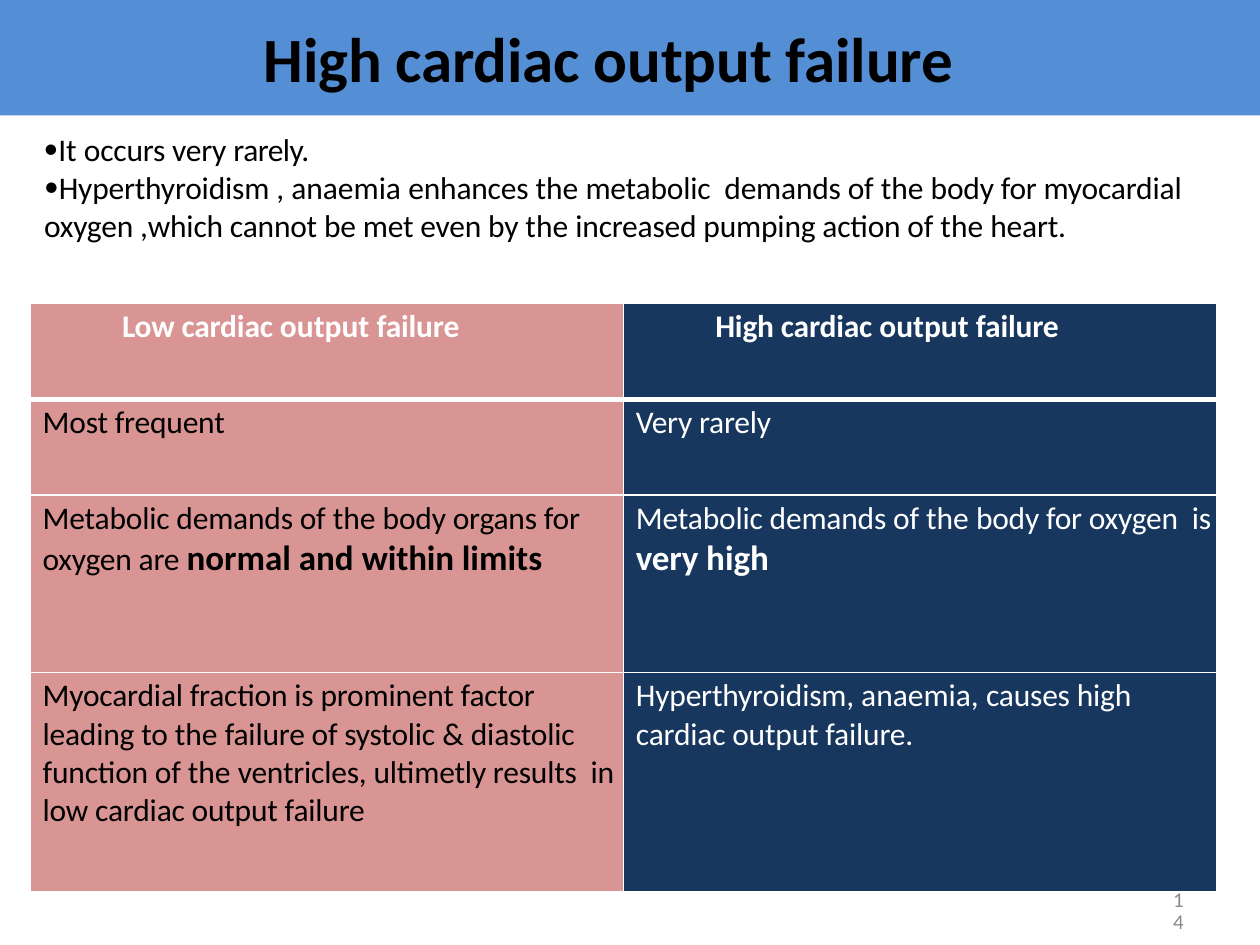
import pptx
import pptx.util
import pptx.dml.color
import pptx.enum.shapes
import pptx.enum.text
import pptx.oxml.ns
from lxml import etree
from dataclasses import dataclass

Cm = pptx.util.Cm
Pt = pptx.util.Pt
Rgb = pptx.dml.color.RGBColor.from_string
qn = pptx.oxml.ns.qn


@dataclass
class Theme:
    font: str = "Calibri"
    bar: str = "548ED4"
    rose: str = "D99593"
    navy: str = "17375E"
    black: str = "000000"
    white: str = "FFFFFF"
    gray: str = "888888"
    head: int = 36
    body: int = 18
    big: int = 20
    small: int = 12


theme = Theme()


def write(para, runs, size, color, bold=False, left=0, hang=0, before=0):
    para.space_before = Pt(before)
    props = para._p.get_or_add_pPr()
    props.set("marL", str(Cm(left)))
    props.set("indent", str(Cm(hang)))
    for text, gap, *strong in runs:
        run = para.add_run()
        run.text = text
        run.font.name = theme.font
        run.font.size = Pt(theme.big if strong else size)
        run.font.bold = bold or bool(strong)
        run.font.color.rgb = Rgb(color)
        run._r.get_or_add_rPr().set("spc", str(gap))
    return props


def setup(shape, x, y, w, h, top=0):
    shape.left, shape.top, shape.width, shape.height = Cm(x), Cm(y), Cm(w), Cm(h)
    frame = shape.text_frame
    frame.word_wrap = True
    frame.auto_size = pptx.enum.text.MSO_AUTO_SIZE.SHAPE_TO_FIT_TEXT
    frame.vertical_anchor = pptx.enum.text.MSO_ANCHOR.TOP
    frame.margin_left = frame.margin_right = frame.margin_bottom = 0
    frame.margin_top = Cm(top)
    return frame


deck = pptx.Presentation()
deck.slide_width, deck.slide_height = Cm(25.4), Cm(19.05)
slide = deck.slides.add_slide(deck.slide_layouts[5])
shapes = slide.shapes

title = shapes.title
frame = setup(title, 3.28, 0.36, 17.93, 1.6, 0.03)
para = frame.paragraphs[0]
para.alignment = pptx.enum.text.PP_ALIGN.CENTER
write(para, [("High cardiac output failure", -10)], theme.head, theme.black,
      True, 0.03, 0, 1)

bar = shapes.add_shape(pptx.enum.shapes.MSO_SHAPE.RECTANGLE, 0, 0, Cm(25.4), Cm(2.33))
bar.shadow.inherit = False
bar.fill.solid()
bar.fill.fore_color.rgb = Rgb(theme.bar)
bar.line.fill.background()
title.element.addprevious(bar.element)

page = shapes.add_textbox(0, 0, 0, 0)
para = setup(page, 23.55, 17.95, 0.43, 0.48).paragraphs[0]
para.line_spacing = Pt(12.4)
write(para, [("14", 0)], theme.small, theme.gray, left=0.1)

rows = [
    ([("Low cardiac ", -10), ("output ", 0), ("failure", -10)],
     [("High cardiac ", -10), ("output ", 0), ("failure", -10)]),
    ([("Most frequent", -10)],
     [("Very ", -20), ("rarely", -10)]),
    ([("Metabolic demands of ", -10), ("the ", 0), ("body organs for  oxygen are ", -10),
      ("normal and ", 0, True), ("within ", -10, True), ("limits", 0, True)],
     [("Metabolic demands of ", -10), ("the ", 0), ("body for oxygen  is ", -10),
      ("very ", -10, True), ("high", 0, True)]),
    ([("Myocardial fraction is prominent factor  leading to ", -10), ("the ", 0),
      ("failure of systolic ", -10), ("& ", 0), ("diastolic  function of ", -10),
      ("the ", 0), ("ventricles, ultimetly results  in low cardiac output failure", -10)],
     [("Hyperthyroidism, ", -10), ("anaemia, ", 0),
      ("causes high cardiac output failure.", -10)]),
]
grid = shapes.add_table(4, 2, Cm(0.61), Cm(6.12), Cm(23.92), Cm(11.86)).table
grid.horz_banding = False
for col in grid.columns:
    col.width = Cm(11.96)
for r, (high, row) in enumerate(zip((1.93, 1.93, 3.58, 4.42), rows)):
    grid.rows[r].height = Cm(high)
    for c, runs in enumerate(row):
        cell = grid.cell(r, c)
        cell.margin_left = cell.margin_right = cell.margin_bottom = 0
        cell.margin_top = Cm(0.08)
        cell.fill.solid()
        cell.fill.fore_color.rgb = Rgb((theme.rose, theme.navy)[c])
        color = theme.white if r == 0 or c == 1 else theme.black
        write(cell.text_frame.paragraphs[0], runs, theme.body, color,
              r == 0, 0.25 if r else 1.85, 0, 2.5)
        props = cell._tc.get_or_add_tcPr()
        for i, side in enumerate("LRTB"):
            thick = (r, side) in ((0, "B"), (1, "T"))
            line = etree.Element(qn("a:ln" + side), w=str(Pt(3 if thick else 1)))
            fill = etree.SubElement(line, qn("a:solidFill"))
            etree.SubElement(fill, qn("a:srgbClr"), val=theme.white)
            props.insert(i, line)

notes = [
    (0.25, -0.23, 1, [("It ", 0), ("occurs very ", -10), ("rarely.", -30)]),
    (0.03, 0, 0, [
        ("Hyperthyroidism ", -10), (", anaemia ", 0), ("enhances ", -10), ("the ", 0),
        ("metabolic  demands of ", -10), ("the ", 0),
        ("body for myocardial oxygen ,which cannot be met even by ", -10), ("the ", 0),
        ("increased pumping action of ", -10), ("the ", 0), ("heart.", -10)]),
]
frame = setup(shapes.add_textbox(0, 0, 0, 0), 0.86, 2.59, 23.14, 3.12, 0.03)
for i, (left, hang, gap, runs) in enumerate(notes):
    para = frame.add_paragraph() if i else frame.paragraphs[0]
    props = write(para, runs, theme.body, theme.black, False, left, hang, gap)
    etree.SubElement(props, qn("a:buSzPct"), val="94000")
    etree.SubElement(props, qn("a:buFont"), typeface=theme.font)
    etree.SubElement(props, qn("a:buChar"), char="•")
    tabs = etree.SubElement(props, qn("a:tabLst"))
    etree.SubElement(tabs, qn("a:tab"), pos=str(Cm(0.25)), algn="l")

deck.save("out.pptx")
